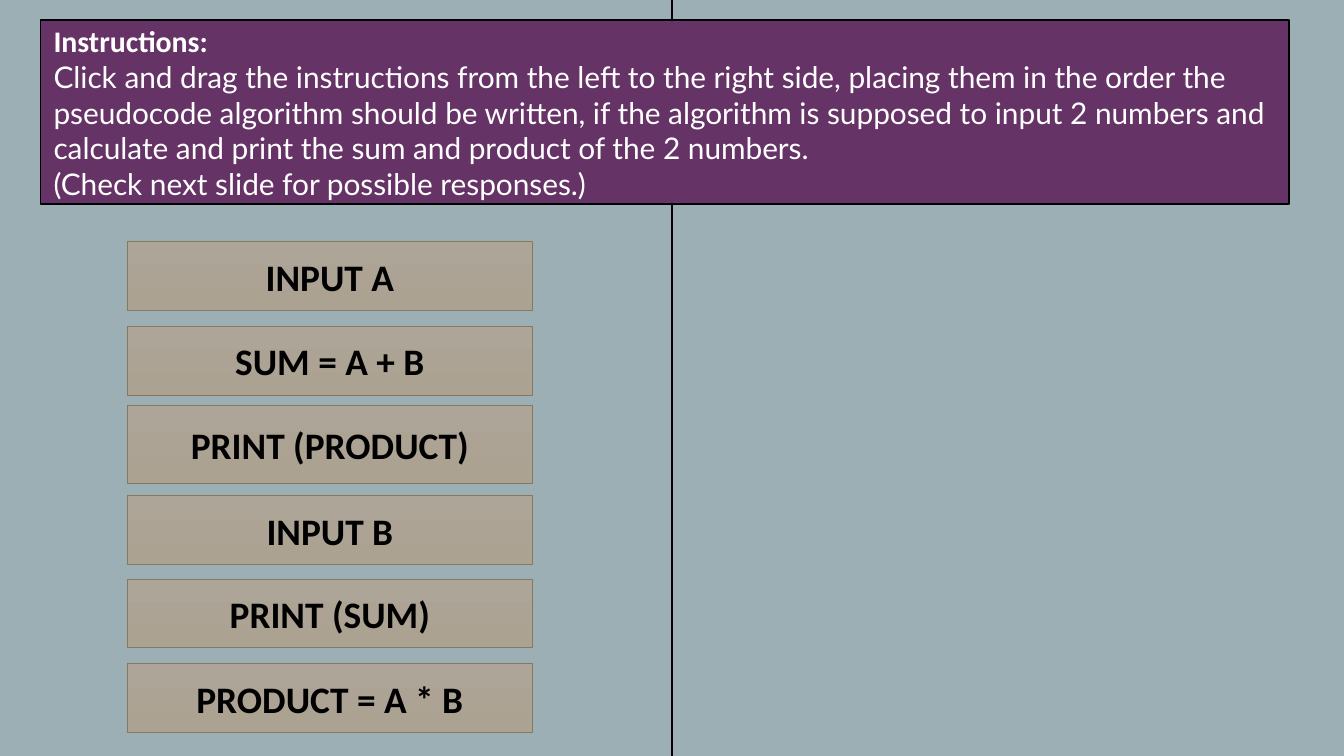
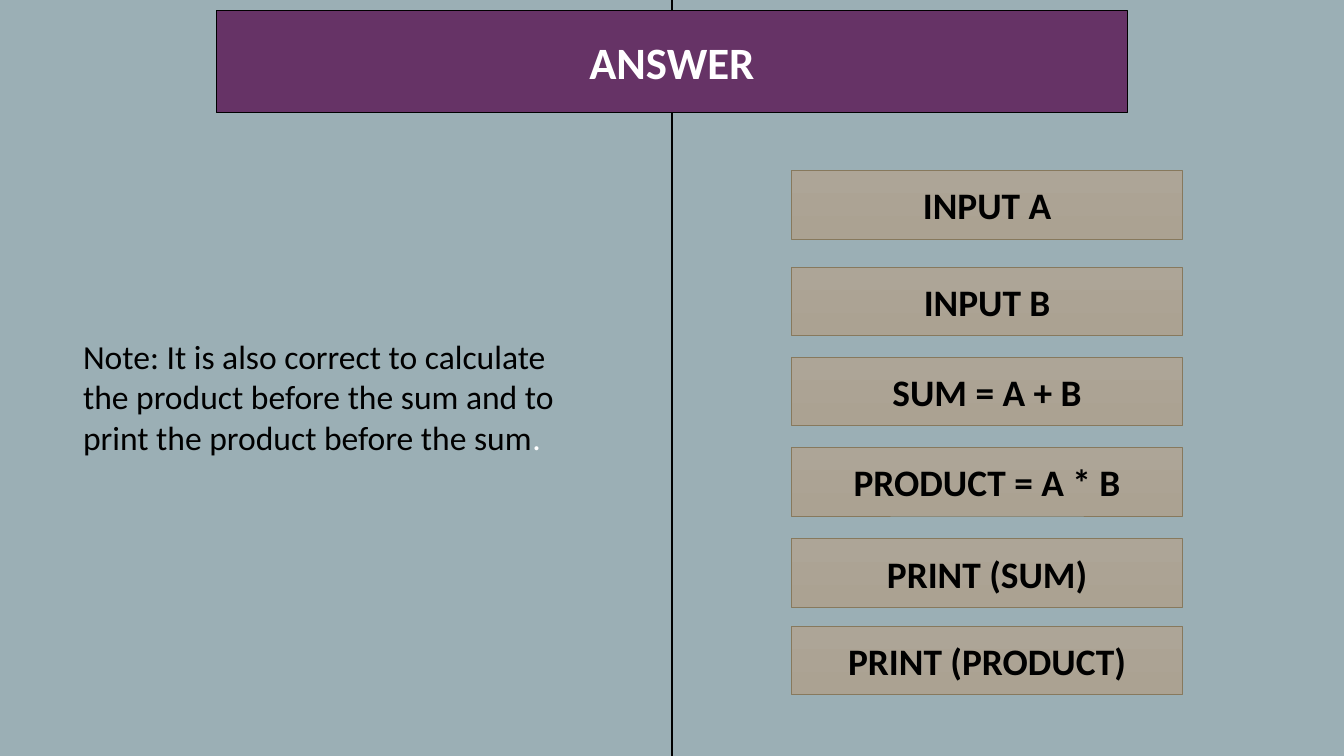
"""Build a drag-and-order pseudocode exercise and its answer slide."""
from lxml import etree
from pptx import Presentation
from pptx.dml.color import RGBColor
from pptx.enum.shapes import MSO_CONNECTOR, MSO_SHAPE
from pptx.enum.text import MSO_ANCHOR, MSO_AUTO_SIZE, PP_ALIGN
from pptx.oxml.ns import qn
from pptx.util import Inches, Pt

RECTANGLE, STRAIGHT = MSO_SHAPE.RECTANGLE, MSO_CONNECTOR.STRAIGHT
MIDDLE, LEFT, CENTER = MSO_ANCHOR.MIDDLE, PP_ALIGN.LEFT, PP_ALIGN.CENTER
NO_AUTOFIT, GROW = MSO_AUTO_SIZE.NONE, MSO_AUTO_SIZE.SHAPE_TO_FIT_TEXT
TITLE_ONLY, BLANK = 5, 6

SLIDE_WIDTH = Inches(10)
SLIDE_HEIGHT = SLIDE_WIDTH * 9 // 16

BACKDROP = RGBColor(0x9B, 0xAF, 0xB5)
PURPLE = RGBColor(0x66, 0x33, 0x66)
BLACK = RGBColor(0x00, 0x00, 0x00)
WHITE = RGBColor(0xFF, 0xFF, 0xFF)
TILE_FILL = (RGBColor(0xAD, 0xA5, 0x97), RGBColor(0xAB, 0xA2, 0x92))
TILE_EDGE = RGBColor(0x87, 0x79, 0x5D)
HEADING_FONT, BODY_FONT = "Calibri", "Lato"

INSTRUCTIONS = [
    ("Instructions:", HEADING_FONT, True),
    ("Click and drag the instructions from the left to the right side, placing "
     "them in the order the pseudocode algorithm should be written, if the "
     "algorithm is supposed to input 2 numbers and calculate and print the sum "
     "and product of the 2 numbers.", BODY_FONT, False),
    ("(Check next slide for possible responses.)", BODY_FONT, False),
]
SHUFFLED_STEPS = [
    ("INPUT A", 1.8, 0.51),
    ("SUM = A + B", 2.43, 0.51),
    ("PRINT (PRODUCT)", 3.02, 0.58),
    ("INPUT B", 3.69, 0.51),
    ("PRINT (SUM)", 4.31, 0.51),
    ("PRODUCT = A * B", 4.94, 0.51),
]
ANSWER_TITLE = "ANSWER"
ORDERED_STEPS = [
    ("INPUT A", 1.27, 0.51),
    ("INPUT B", 1.99, 0.51),
    ("SUM = A + B", 2.66, 0.51),
    ("PRODUCT = A * B", 3.33, 0.51),
    ("PRINT (SUM)", 4.01, 0.51),
    ("PRINT (PRODUCT)", 4.66, 0.51),
]
NOTE = ("Note: It is also correct to calculate the product before the sum and "
        "to print the product before the sum")


def style(paragraph, size, color, align=LEFT, name=HEADING_FONT, bold=False):
    paragraph.alignment = align
    font = paragraph.font
    font.name, font.size, font.bold = name, Pt(size), bold
    font.color.rgb = color


def add_split_slide(prs, layout):
    slide = prs.slides.add_slide(prs.slide_layouts[layout])
    slide.background.fill.solid()
    slide.background.fill.fore_color.rgb = BACKDROP
    divider = slide.shapes.add_connector(
        STRAIGHT, Inches(5), Inches(-0.03), Inches(5), Inches(5.64))
    divider.line.color.rgb = BLACK
    divider.line.width = Pt(0.75)
    etree.SubElement(divider.element.spPr, qn("a:effectLst"))
    return slide


def format_banner(banner):
    banner.fill.solid()
    banner.fill.fore_color.rgb = PURPLE
    banner.line.color.rgb = BLACK
    banner.line.width = Pt(0.75)
    frame = banner.text_frame
    frame.word_wrap = True
    frame.auto_size = NO_AUTOFIT
    frame.vertical_anchor = MIDDLE
    frame.margin_left = frame.margin_right = Inches(0.1)
    frame.margin_top = frame.margin_bottom = Inches(0.1)
    return frame


def add_steps(slide, steps, left, width):
    for label, top, height in steps:
        tile = slide.shapes.add_shape(
            RECTANGLE, Inches(left), Inches(top), Inches(width), Inches(height))
        tile.shadow.inherit = False
        tile.fill.gradient()
        tile.fill.gradient_angle = 270
        for stop, color in zip(tile.fill.gradient_stops, TILE_FILL):
            stop.color.rgb = color
        tile.line.color.rgb = TILE_EDGE
        tile.line.width = Pt(0.5)
        frame = tile.text_frame
        frame.vertical_anchor = MIDDLE
        frame.text = label
        style(frame.paragraphs[0], 20, BLACK, CENTER, bold=True)


def build_exercise(prs):
    slide = add_split_slide(prs, BLANK)
    banner = slide.shapes.add_shape(
        RECTANGLE, Inches(0.3), Inches(0.15), Inches(9.29), Inches(1.37))
    banner.shadow.inherit = False
    frame = format_banner(banner)
    frame.text = "\n".join(text for text, _, _ in INSTRUCTIONS)
    for paragraph, (_, name, bold) in zip(frame.paragraphs, INSTRUCTIONS):
        style(paragraph, 16, WHITE, name=name, bold=bold)
    add_steps(slide, SHUFFLED_STEPS, 0.95, 3.01)


def build_answer(prs):
    slide = add_split_slide(prs, TITLE_ONLY)
    title = slide.shapes.title
    title.element.getparent().append(title.element)
    title.left, title.top = Inches(1.61), Inches(0.08)
    title.width, title.height = Inches(6.78), Inches(0.76)
    frame = format_banner(title)
    frame.text = ANSWER_TITLE
    style(frame.paragraphs[0], 24, WHITE, CENTER, bold=True)
    add_steps(slide, ORDERED_STEPS, 5.89, 2.91)

    note = slide.shapes.add_textbox(
        Inches(0.52), Inches(2.45), Inches(3.86), Inches(1.01)).text_frame
    note.word_wrap = True
    note.auto_size = GROW
    note.text = NOTE
    style(note.paragraphs[0], 18, BLACK)
    full_stop = note.paragraphs[0].add_run()
    full_stop.text = "."
    full_stop.font.color.rgb = WHITE


def main():
    prs = Presentation()
    prs.slide_width, prs.slide_height = SLIDE_WIDTH, SLIDE_HEIGHT
    build_exercise(prs)
    build_answer(prs)
    prs.save("out.pptx")


if __name__ == "__main__":
    main()
